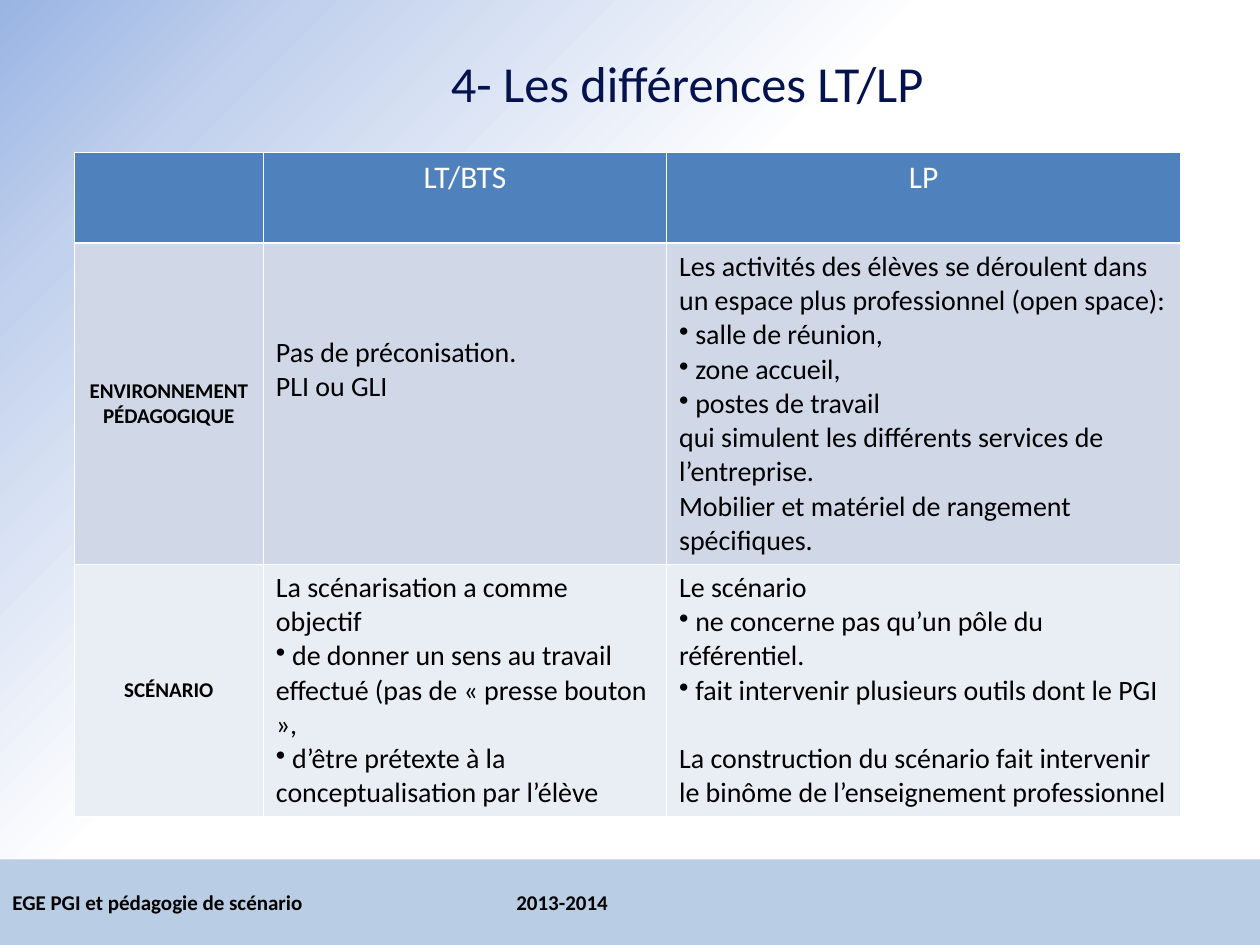
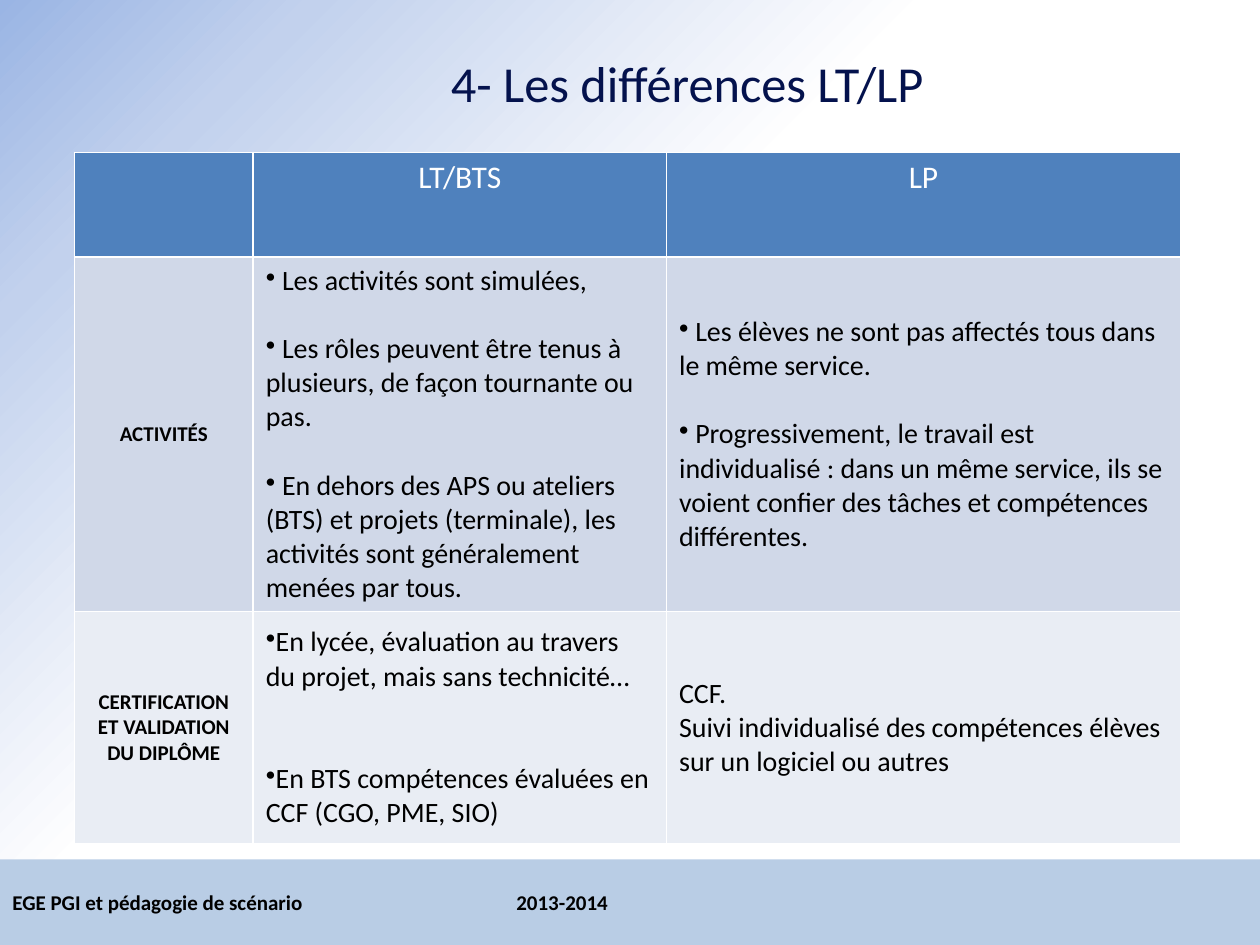
"""Build two slides comparing LT and LP teaching practices."""
from copy import deepcopy
from dataclasses import dataclass

from lxml.etree import SubElement
from pptx import Presentation
from pptx.dml.color import RGBColor
from pptx.enum.shapes import MSO_SHAPE as Shape
from pptx.enum.text import MSO_ANCHOR as Anchor, PP_ALIGN as Align
from pptx.oxml.ns import qn
from pptx.util import Inches, Pt

FONT = "Calibri"
BLACK, WHITE, NAVY = "000000", "FFFFFF", "04124D"
HEADER_FILL, BAND_FILL = "4F81BD", "B9CDE5"
ROW_FILLS = ("D0D8E8", "E9EDF4")
GRADIENT = ((0, "9AB5E4"), (0.15, "C2D1ED"), (0.44, WHITE), (1, WHITE))
BAND_TOP = 6.82
TABLE_LEFT, TABLE_TOP = 0.59, 1.21
BODY_SIZE = 16
LINE_HEIGHT = 19.5
TITLE = "4- Les différences LT/LP"
HEADINGS = ("", "LT/BTS", "LP")


@dataclass
class Line:
    """A paragraph of a cell, with blank lines' worth of space above it."""
    text: str
    bullet: bool = False
    gap: int = 0


@dataclass
class Row:
    """A labelled comparison between the two kinds of school."""
    label: str
    height: float
    lt_lines: list[Line]
    lp_lines: list[Line]
    lt_bottom: float = 0.05


@dataclass
class Comparison:
    """The table of one slide."""
    columns: tuple[float, ...]
    header_height: float
    rows: list[Row]


COMPARISONS = [
    Comparison((1.5, 3.2, 4.08), 0.72, [
        Row("ENVIRONNEMENT PÉDAGOGIQUE", 2.55,
            [Line("Pas de préconisation."), Line("PLI ou GLI")],
            [Line("Les activités des élèves se déroulent dans un espace plus "
                  "professionnel (open space):"),
             Line(" salle de réunion,", bullet=True),
             Line(" zone accueil,", bullet=True),
             Line(" postes de travail", bullet=True),
             Line("qui simulent les différents services de l’entreprise."),
             Line("Mobilier et matériel de rangement spécifiques.")],
            lt_bottom=0.59),
        Row("SCÉNARIO", 2.0,
            [Line("La scénarisation a comme objectif"),
             Line(" de donner un sens au travail effectué (pas de « presse bouton »,",
                  bullet=True),
             Line(" d’être prétexte à la conceptualisation par l’élève", bullet=True)],
            [Line("Le scénario"),
             Line(" ne concerne pas qu’un pôle du référentiel.", bullet=True),
             Line(" fait intervenir plusieurs outils dont le PGI", bullet=True),
             Line("La construction du scénario fait intervenir le binôme de "
                  "l’enseignement professionnel", gap=1)]),
    ]),
    Comparison((1.42, 3.28, 4.08), 0.83, [
        Row("ACTIVITÉS", 2.81,
            [Line(" Les activités sont simulées,", bullet=True),
             Line(" Les rôles peuvent être tenus à plusieurs, de façon tournante "
                  "ou pas.", bullet=True, gap=1),
             Line(" En dehors des APS ou ateliers (BTS) et projets (terminale), les "
                  "activités sont généralement menées par tous.", bullet=True, gap=1)],
            [Line(" Les élèves ne sont pas affectés tous dans le même service.",
                  bullet=True),
             Line(" Progressivement, le travail est individualisé : dans un même "
                  "service, ils se voient confier des tâches et compétences "
                  "différentes.", bullet=True, gap=1)]),
        Row("CERTIFICATION ET VALIDATION DU DIPLÔME", 1.84,
            [Line("En lycée, évaluation au travers du projet, mais sans technicité…",
                  bullet=True),
             Line("En BTS compétences évaluées en CCF (CGO, PME, SIO)",
                  bullet=True, gap=2)],
            [Line("CCF."),
             Line("Suivi individualisé des compétences élèves sur un logiciel "
                  "ou autres")]),
    ]),
]


def color(value: str) -> RGBColor:
    """Turn a hex string into a colour."""
    return RGBColor.from_string(value)


def write(para, text: str, *, size: float = BODY_SIZE, ink: str = BLACK,
          bold: bool = False, align=Align.LEFT, bullet: bool = False,
          gap: int = 0, tabs: tuple[float, ...] = ()) -> None:
    """Fill a paragraph with formatted text."""
    properties = para._p.get_or_add_pPr()
    if bullet:
        properties.set("marL", "0")
        properties.set("indent", "0")
        SubElement(properties, qn("a:buChar")).set("char", "•")
    if tabs:
        tab_list = SubElement(properties, qn("a:tabLst"))
        for position in tabs:
            tab = SubElement(tab_list, qn("a:tab"))
            tab.set("pos", str(Inches(position)))
            tab.set("algn", "l")
    para.alignment = align
    if gap:
        para.space_before = Pt(gap * LINE_HEIGHT)
    span = para.add_run()
    span.text = text
    for font in (para.font, span.font):
        font.name, font.size, font.bold = FONT, Pt(size), bold
        font.color.rgb = color(ink)


def add_panel(slide, top: float, height: float):
    """Add a full-width rectangle without outline or shadow."""
    panel = slide.shapes.add_shape(
        Shape.RECTANGLE, 0, Inches(top), Inches(10), Inches(height))
    panel.shadow.inherit = False
    panel.line.fill.background()
    return panel


def decorate_layout(layout, slide) -> None:
    """Put the gradient and the footer band on the shared layout."""
    backdrop = add_panel(slide, 0, BAND_TOP)
    backdrop.fill.gradient()
    backdrop.fill.gradient_angle = 315
    stop_list = backdrop.element.find(".//" + qn("a:gsLst"))
    while len(stop_list) < len(GRADIENT):
        stop_list.append(deepcopy(stop_list[-1]))
    stops = backdrop.fill.gradient_stops
    for stop, (position, tone) in zip(stops, GRADIENT):
        stop.position = position
        stop.color.rgb = color(tone)

    band = add_panel(slide, BAND_TOP, 7.5 - BAND_TOP)
    band.fill.solid()
    band.fill.fore_color.rgb = color(BAND_FILL)
    band.text_frame.vertical_anchor = Anchor.MIDDLE
    write(band.text_frame.paragraphs[0],
          "EGE PGI et pédagogie de scénario\t\t2013-2014",
          size=12, bold=True, tabs=(3, 4))
    for panel in (band, backdrop):
        layout.shapes.element.insert(2, panel.element)


def add_title(slide) -> None:
    """Place and write the slide title."""
    title = slide.shapes.title
    title.left, title.top = Inches(2.1), Inches(0.37)
    title.width, title.height = Inches(6.71), Inches(0.56)
    title.text_frame.vertical_anchor = Anchor.MIDDLE
    write(title.text_frame.paragraphs[0], TITLE,
          size=28.8, ink=NAVY, align=Align.CENTER)


def fill_cell(cell, lines: list[Line], fill: str, anchor=Anchor.MIDDLE,
              **style) -> None:
    """Colour a cell and write its lines."""
    cell.fill.solid()
    cell.fill.fore_color.rgb = color(fill)
    cell.vertical_anchor = anchor
    frame = cell.text_frame
    for index, line in enumerate(lines):
        para = frame.add_paragraph() if index else frame.paragraphs[0]
        write(para, line.text, bullet=line.bullet, gap=line.gap, **style)


def add_comparison(slide, comparison: Comparison) -> None:
    """Draw the comparison table."""
    heights = [comparison.header_height, *(row.height for row in comparison.rows)]
    table = slide.shapes.add_table(
        len(heights), len(comparison.columns), Inches(TABLE_LEFT), Inches(TABLE_TOP),
        Inches(sum(comparison.columns)), Inches(sum(heights))).table
    for column, width in zip(table.columns, comparison.columns):
        column.width = Inches(width)
    for table_row, height in zip(table.rows, heights):
        table_row.height = Inches(height)
    for index, heading in enumerate(HEADINGS):
        lines = [Line(heading)] if heading else []
        fill_cell(table.cell(0, index), lines, HEADER_FILL, Anchor.TOP,
                  size=18, ink=WHITE, align=Align.CENTER)
    for index, (row, fill) in enumerate(zip(comparison.rows, ROW_FILLS), start=1):
        label, lt_cell, lp_cell = (table.cell(index, column) for column in range(3))
        fill_cell(label, [Line(row.label)], fill,
                  size=12, bold=True, align=Align.CENTER)
        fill_cell(lt_cell, row.lt_lines, fill)
        lt_cell.margin_bottom = Inches(row.lt_bottom)
        fill_cell(lp_cell, row.lp_lines, fill)


def main() -> None:
    """Build and save the deck."""
    deck = Presentation()
    deck.slide_width, deck.slide_height = Inches(10), Inches(7.5)
    layout = deck.slide_layouts[5]
    for index, comparison in enumerate(COMPARISONS):
        slide = deck.slides.add_slide(layout)
        if index == 0:
            decorate_layout(layout, slide)
        add_title(slide)
        add_comparison(slide, comparison)
    deck.save("out.pptx")


if __name__ == "__main__":
    main()
